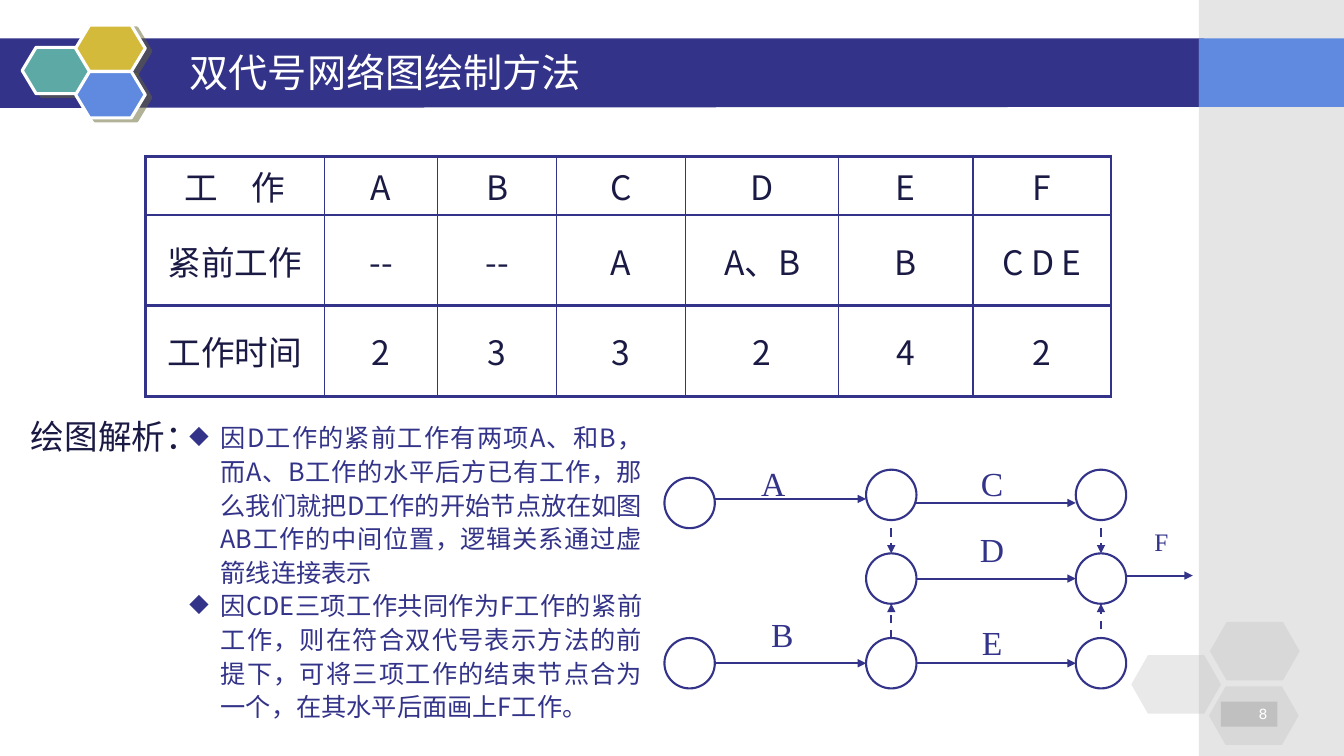
from dataclasses import dataclass

from lxml import etree
from pptx import Presentation
from pptx.dml.color import RGBColor
from pptx.enum.dml import MSO_LINE
from pptx.enum.shapes import MSO_CONNECTOR, MSO_SHAPE
from pptx.enum.text import MSO_ANCHOR, PP_ALIGN
from pptx.oxml import parse_xml
from pptx.oxml.ns import nsdecls, qn
from pptx.util import Inches, Pt

RECT, HEXAGON, ELLIPSE = MSO_SHAPE.RECTANGLE, MSO_SHAPE.HEXAGON, MSO_SHAPE.OVAL
LEFT, CENTER, RIGHT, JUSTIFY = PP_ALIGN.LEFT, PP_ALIGN.CENTER, PP_ALIGN.RIGHT, PP_ALIGN.JUSTIFY
MIDDLE, DASH, STRAIGHT = MSO_ANCHOR.MIDDLE, MSO_LINE.DASH, MSO_CONNECTOR.STRAIGHT


@dataclass(frozen=True)
class Theme:
    navy: str = "333389"
    ink: str = "1A1A44"
    blue: str = "5F8ADF"
    teal: str = "5DA9A5"
    gold: str = "D4BA3A"
    gray: str = "C0C0C0"
    white: str = "FFFFFF"
    shadow: str = "666633"
    sans: str = "Noto Sans CJK SC"
    serif: str = "Times New Roman"
    number_font: str = "DejaVu Sans"
    title: int = 28
    large: int = 24
    body: int = 18
    number: int = 10


T = Theme()

prs = Presentation()
prs.slide_width, prs.slide_height = Inches(13.33), Inches(7.5)
s = prs.slides.add_slide(prs.slide_layouts[5])


def add_box(kind, box, fill=None, line=None, width=1.5, alpha=None):
    """Add a shadowless preset shape; alpha is the fill opacity in percent."""
    sp = s.shapes.add_shape(kind, *map(Inches, box))
    sp.shadow.inherit = False
    if fill:
        sp.fill.solid()
        sp.fill.fore_color.rgb = RGBColor.from_string(fill)
        if alpha:
            color = sp.fill._xPr.find(".//" + qn("a:srgbClr"))
            etree.SubElement(color, qn("a:alpha")).set("val", str(alpha * 1000))
    else:
        sp.fill.background()
    if line:
        sp.line.color.rgb = RGBColor.from_string(line)
        sp.line.width = Pt(width)
    else:
        sp.line.fill.background()
    return sp


def write(tf, text, size, color, font=T.sans, align=CENTER):
    tf.text = text
    for p in tf.paragraphs:
        p.alignment = align
        for r in p.runs:
            r.font.size = Pt(size)
            r.font.color.rgb = RGBColor.from_string(color)
            r.font.name = font
            etree.SubElement(r.font._element, qn("a:ea")).set("typeface", font)


# Header band and side column
fb = s.shapes.build_freeform(Inches(-0.01), Inches(0.38))
fb.add_line_segments([(Inches(x), Inches(y)) for x, y in
                      [(11.94, 0.38), (11.93, 1.06), (-0.01, 1.07)]])
band = fb.convert_to_shape()
band.shadow.inherit = False
band.fill.solid()
band.fill.fore_color.rgb = RGBColor.from_string(T.navy)
band.line.fill.background()
add_box(RECT, (11.89, 0, 1.44, 7.5), T.gray, alpha=40)
add_box(RECT, (11.89, 0.38, 1.44, 0.68), T.blue)

# Hexagon clusters
for x, y, color in [(0.22, 0.47, T.teal), (0.75, 0.25, T.gold), (0.75, 0.71, T.blue)]:
    sp = add_box(HEXAGON, (x, y, 0.69, 0.46), color, T.white, 2.25)
    sp.adjustments[0] = 0.3
    effects = sp._element.spPr.find(qn("a:effectLst"))
    effects.append(parse_xml(
        f'<a:outerShdw {nsdecls("a")} dist="57150" dir="1620000" algn="ctr" rotWithShape="0">'
        f'<a:srgbClr val="{T.shadow}"><a:alpha val="50000"/></a:srgbClr></a:outerShdw>'))
for x, y in [(11.22, 6.5), (12, 6.17), (11.99, 6.81)]:
    sp = add_box(HEXAGON, (x, y, 0.89, 0.58), T.gray, alpha=35)
    sp.adjustments[0] = 0.286

page = add_box(RECT, (12.11, 6.96, 0.56, 0.25), T.gray)
write(page.text_frame, "8", T.number, T.white, T.number_font, RIGHT)

# Title, raised above the band
title = s.shapes.title
title.left, title.top, title.width, title.height = map(Inches, (1.78, 0.42, 9.67, 0.58))
title.text_frame.vertical_anchor = MIDDLE
write(title.text_frame, "双代号网络图绘制方法", T.title, T.white, align=LEFT)
s.shapes._spTree.append(title._element)

# Work table
rows = [
    ["工　作", "A", "B", "C", "D", "E", "F"],
    ["紧前工作", "--", "--", "A", "A、B", "B", "C D E"],
    ["工作时间", "2", "3", "3", "2", "4", "2"],
]
frame = s.shapes.add_table(3, 7, *map(Inches, (1.44, 1.55, 9.59, 2.34)))
table = frame.table
for col, width in zip(table.columns, [1.78, 1.12, 1.18, 1.28, 1.52, 1.33, 1.37]):
    col.width = Inches(width)
for row, height in zip(table.rows, [0.54, 0.9, 0.9]):
    row.height = Inches(height)
for i, row in enumerate(rows):
    for j, text in enumerate(row):
        cell = table.cell(i, j)
        cell.vertical_anchor = MIDDLE
        write(cell.text_frame, text, T.large, T.ink)
        thick = {"lnL": j in (0, 6), "lnR": j >= 5, "lnT": i in (0, 2), "lnB": i > 0}
        tc_pr = cell._tc.get_or_add_tcPr()
        for side, heavy in thick.items():
            tc_pr.append(parse_xml(
                f'<a:{side} {nsdecls("a")} w="{Pt(2.25 if heavy else 1)}"><a:solidFill>'
                f'<a:srgbClr val="{T.navy}"/></a:solidFill></a:{side}>'))
        cell.fill.background()

# Explanation
explanation = s.shapes.add_textbox(*map(Inches, (1.78, 4.11, 4.69, 3.1)))
tf = explanation.text_frame
tf.word_wrap = True
write(tf, "因D工作的紧前工作有两项A、和B，而A、B工作的水平后方已有工作，"
          "那么我们就把D工作的开始节点放在如图AB工作的中间位置，逻辑关系通过虚箭线连接表示\n"
          "因CDE三项工作共同作为F工作的紧前工作，则在符合双代号表示方法的前提下，"
          "可将三项工作的结束节点合为一个，在其水平后面画上F工作。", T.body, T.navy, align=JUSTIFY)
for p in tf.paragraphs:
    p.line_spacing = Pt(24)
    p_pr = p._p.get_or_add_pPr()
    p_pr.set("marL", str(Inches(0.31)))
    p_pr.set("indent", str(Inches(-0.31)))
    etree.SubElement(p_pr, qn("a:buChar")).set("char", "◆")

# Network nodes
for x, y in [(6.59, 4.74), (6.59, 6.33)] + [(x, y) for x in (8.59, 10.67)
                                            for y in (4.66, 5.49, 6.33)]:
    add_box(ELLIPSE, (x, y, 0.5, 0.5), line=T.navy)

# Work arrows are solid, dummy arrows dashed
work_arrows = [(7.09, 4.95, 8.59, 4.95), (9.09, 4.99, 10.67, 4.99), (7.09, 6.58, 8.59, 6.58),
               (9.09, 6.58, 10.67, 6.58), (9.09, 5.74, 10.67, 5.74), (11.17, 5.71, 11.83, 5.71)]
dummy_arrows = [(8.84, 5.24, 8.84, 5.49), (8.84, 6.33, 8.84, 5.99),
                (10.92, 5.24, 10.92, 5.49), (10.92, 6.24, 10.92, 5.99)]
for ends in work_arrows + dummy_arrows:
    arrow = s.shapes.add_connector(STRAIGHT, *map(Inches, ends))
    arrow.line.color.rgb = RGBColor.from_string(T.navy)
    arrow.line.width = Pt(1.5)
    if ends in dummy_arrows:
        arrow.line.dash_style = DASH
    etree.SubElement(arrow.line._get_or_add_ln(), qn("a:tailEnd")).set("type", "triangle")
    etree.SubElement(arrow._element.spPr, qn("a:effectLst"))

# Labels
for text, box, color, font in [
    ("绘图解析：", (0.82, 3.99, 0.64, 0.67), T.ink, T.sans),
    ("A", (7.42, 4.58, 0.5, 0.42), T.navy, T.serif),
    ("B", (7.51, 6.08, 0.5, 0.42), T.navy, T.serif),
    ("C", (9.59, 4.58, 0.5, 0.42), T.navy, T.serif),
    ("D", (9.59, 5.24, 0.5, 0.42), T.navy, T.serif),
    ("E", (9.59, 6.16, 0.5, 0.42), T.navy, T.serif),
]:
    tf = add_box(ELLIPSE, box).text_frame
    tf.word_wrap = False
    tf.vertical_anchor = MIDDLE
    write(tf, text, T.large, color, font)
final_label = s.shapes.add_textbox(*map(Inches, (11.35, 5.17, 0.3, 0.4)))
write(final_label.text_frame, "F", T.body, T.navy, T.serif, LEFT)

prs.save("out.pptx")
